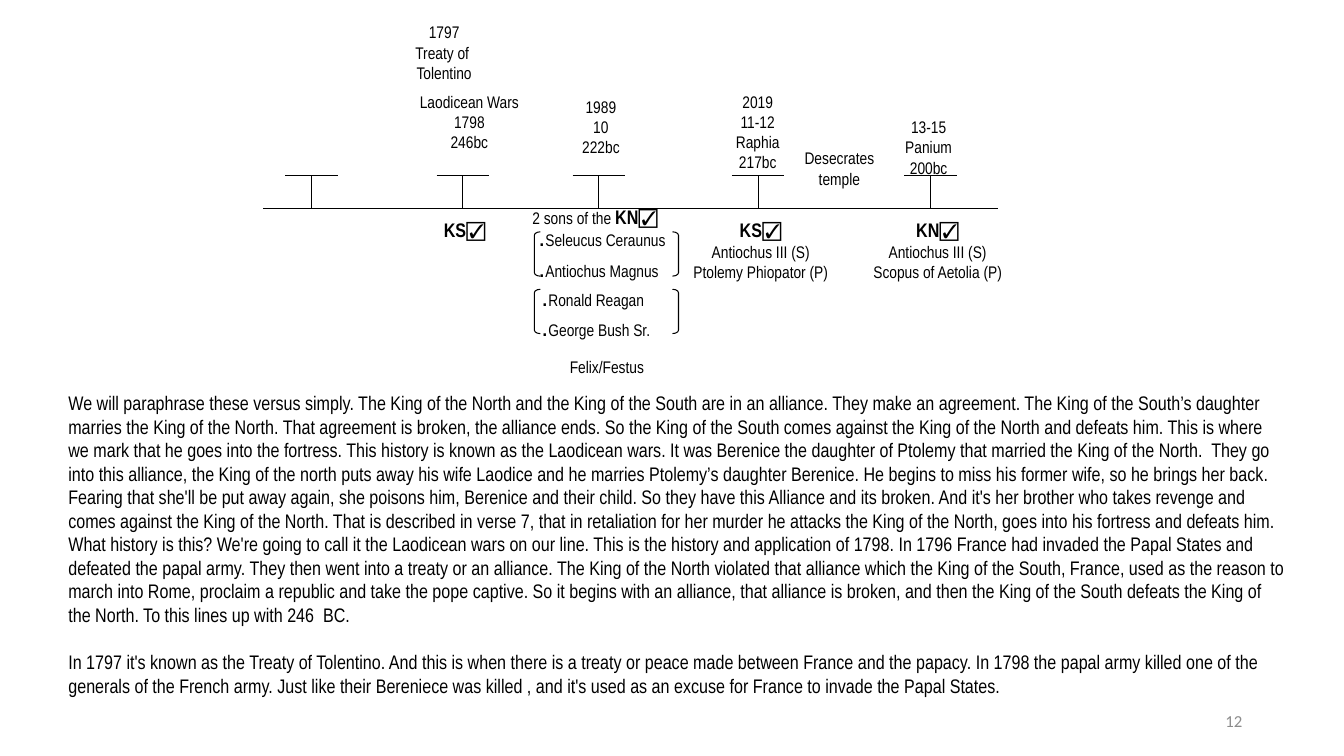
import pptx
import pptx.util
import pptx.dml.color
import pptx.enum.shapes
import pptx.enum.text
import pptx.oxml.ns
import lxml.etree

Inches = pptx.util.Inches
Pt = pptx.util.Pt
ALIGN = pptx.enum.text.PP_ALIGN
SHAPE = pptx.enum.shapes.MSO_SHAPE

COLORS = {"ink": "000000", "page_number": "8C8C8C"}
NARROW = "Arial Narrow"
AXIS_Y = 2.07
TICK_TOP = 1.74
TICK_HALF = 0.26
TICKS = [3.09, 4.59, 5.94, 7.52, 9.23]

# Paragraphs of the story, each as a list of passages
STORY = [
    [
        "We will paraphrase these versus simply. The King of the North and the King of the South",
        "are in an alliance. They make an agreement. The King of the South’s daughter marries the",
        "King of the North. That agreement is broken, the alliance ends. So the King of the South",
        "comes against the King of the North and defeats him. This is where we mark that he goes",
        "into the fortress. This history is known as the Laodicean wars. It was Berenice the",
        "daughter of Ptolemy that married the King of the North.  They go into this alliance, the",
        "King of the north puts away his wife Laodice and he marries Ptolemy’s daughter Berenice.",
        "He begins to miss his former wife, so he brings her back. Fearing that she'll be put away",
        "again, she poisons him, Berenice and their child. So they have this Alliance and its",
        "broken. And it's her brother who takes revenge and comes against the King of the North.",
        "That is described in verse 7, that in retaliation for her murder he attacks the King of",
        "the North, goes into his fortress and defeats him. What history is this? We're going to",
        "call it the Laodicean wars on our line. This is the history and application of 1798. In",
        "1796 France had invaded the Papal States and defeated the papal army. They then went into",
        "a treaty or an alliance. The King of the North violated that alliance which the King of",
        "the South, France, used as the reason to march into Rome, proclaim a republic and take",
        "the pope captive. So it begins with an alliance, that alliance is broken, and then the",
        "King of the South defeats the King of the North. To this lines up with 246  BC.",
    ],
    [
        "In 1797 it's known as the Treaty of Tolentino. And this is when there is a treaty or",
        "peace made between France and the papacy. In 1798 the papal army killed one of the",
        "generals of the French army. Just like their Bereniece was killed , and it's used as an",
        "excuse for France to invade the Papal States.",
    ],
]


def color(name):
    return pptx.dml.color.RGBColor.from_string(COLORS[name])


def add_span(para, text, size=12, font=NARROW, bold=False, ink="ink"):
    span = para.add_run()
    span.text = text
    span.font.size = Pt(size)
    span.font.name = font
    span.font.bold = bold
    span.font.color.rgb = color(ink)


def add_text(page, place, lines, align=ALIGN.CENTER, inset=0.04, gap=0,
             anchor=pptx.enum.text.MSO_ANCHOR.TOP, **style):
    """Each line is a string, or a list of (text, format) spans."""
    box = page.shapes.add_textbox(*map(Inches, place))
    frame = box.text_frame
    frame.word_wrap = True
    frame.vertical_anchor = anchor
    frame.margin_left = frame.margin_right = Inches(inset)
    frame.margin_top = frame.margin_bottom = Inches(min(inset, 0.05))
    for index, line in enumerate(lines):
        para = frame.add_paragraph() if index else frame.paragraphs[0]
        para.alignment = align
        if index and gap:
            para.space_before = Pt(gap)
        for text, extra in [(line, {})] if isinstance(line, str) else line:
            add_span(para, text, **{**style, **extra})


def add_line(page, x1, y1, x2, y2):
    line = page.shapes.add_connector(
        pptx.enum.shapes.MSO_CONNECTOR.STRAIGHT, *map(Inches, (x1, y1, x2, y2)))
    line.line.color.rgb = color("ink")
    line.line.width = Pt(0.75)
    properties = line._element.spPr
    lxml.etree.SubElement(properties, pptx.oxml.ns.qn("a:effectLst"))


def add_bracket(page, kind, x, y):
    bracket = page.shapes.add_shape(kind, *map(Inches, (x, y, 0.06, 0.44)))
    bracket.adjustments[0] = 0.58
    bracket.shadow.inherit = False
    bracket.fill.background()
    bracket.line.color.rgb = color("ink")
    bracket.line.width = Pt(0.75)


def king(name):
    return [(name, {"size": 14, "bold": True}),
            ("☑", {"size": 14, "bold": True, "font": "Arial"})]


def add_pair(page, x, y, bracket_y, names):
    lines = [[(".", {"size": 18, "font": "Arial"}), (name, {})] for name in names]
    add_text(page, (x, y, 1.44, 0.56), lines, align=ALIGN.LEFT)
    add_bracket(page, SHAPE.LEFT_BRACKET, 5.3, bracket_y)
    add_bracket(page, SHAPE.RIGHT_BRACKET, 6.67, bracket_y)


def main():
    deck = pptx.Presentation()
    deck.slide_width = Inches(13.33)
    deck.slide_height = Inches(7.5)
    page = deck.slides.add_slide(deck.slide_layouts[6])

    # Timeline with its T-shaped marks
    add_line(page, 2.61, AXIS_Y, 9.9, AXIS_Y)
    for x in TICKS:
        add_line(page, x, TICK_TOP, x, AXIS_Y)
        add_line(page, x - TICK_HALF, TICK_TOP, x + TICK_HALF, TICK_TOP)

    # Events above the line
    events = [
        ((3.86, 0.18, 1.09, 0.69), ["1797", "Treaty of ", "Tolentino"]),
        ((4.11, 0.87, 1.09, 0.9), ["Laodicean Wars", "1798", "246bc"]),
        ((5.49, 0.92, 0.94, 0.84), ["1989", "10", "222bc"]),
        ((7.17, 0.87, 0.69, 0.9), ["2019", "11-12", "Raphia", "217bc"]),
        ((7.92, 1.43, 0.81, 0.53), ["Desecrates", "temple"]),
        ((8.8, 1.12, 0.82, 0.67), ["13-15", "Panium", "200bc"]),
    ]
    # Kings below the line
    kings = [
        ((4.11, 2.12, 1, 0.81), [king("KS")]),
        ((6.8, 2.12, 1.49, 0.81), [king("KS"), "Antiochus III (S)", "Ptolemy Phiopator (P)"]),
        ((8.61, 2.12, 1.38, 0.81), [king("KN"), "Antiochus III (S)", "Scopus of Aetolia (P)"]),
        ((5.3, 3.5, 1.44, 0.28), ["Felix/Festus"]),
    ]
    for place, lines in events + kings:
        add_text(page, place, lines)

    # Bracketed pairs of names
    add_text(page, (5.24, 1.99, 1.51, 0.3), [[("2 sons of the ", {})] + king("KN")],
             align=ALIGN.LEFT)
    add_pair(page, 5.3, 2.16, 2.3, ["Seleucus Ceraunus", "Antiochus Magnus"])
    add_pair(page, 5.33, 2.75, 2.87, ["Ronald Reagan", "George Bush Sr."])

    # Story and page number
    story = [" ".join(passages) for passages in STORY]
    add_text(page, (0.58, 3.83, 12.3, 3.2), story, align=ALIGN.LEFT, inset=0.1, gap=17, size=14)
    add_text(page, (9.42, 6.95, 3, 0.4), ["12"], align=ALIGN.RIGHT, inset=0.1,
             anchor=pptx.enum.text.MSO_ANCHOR.MIDDLE, font="Calibri", ink="page_number")

    deck.save("out.pptx")


if __name__ == "__main__":
    main()
